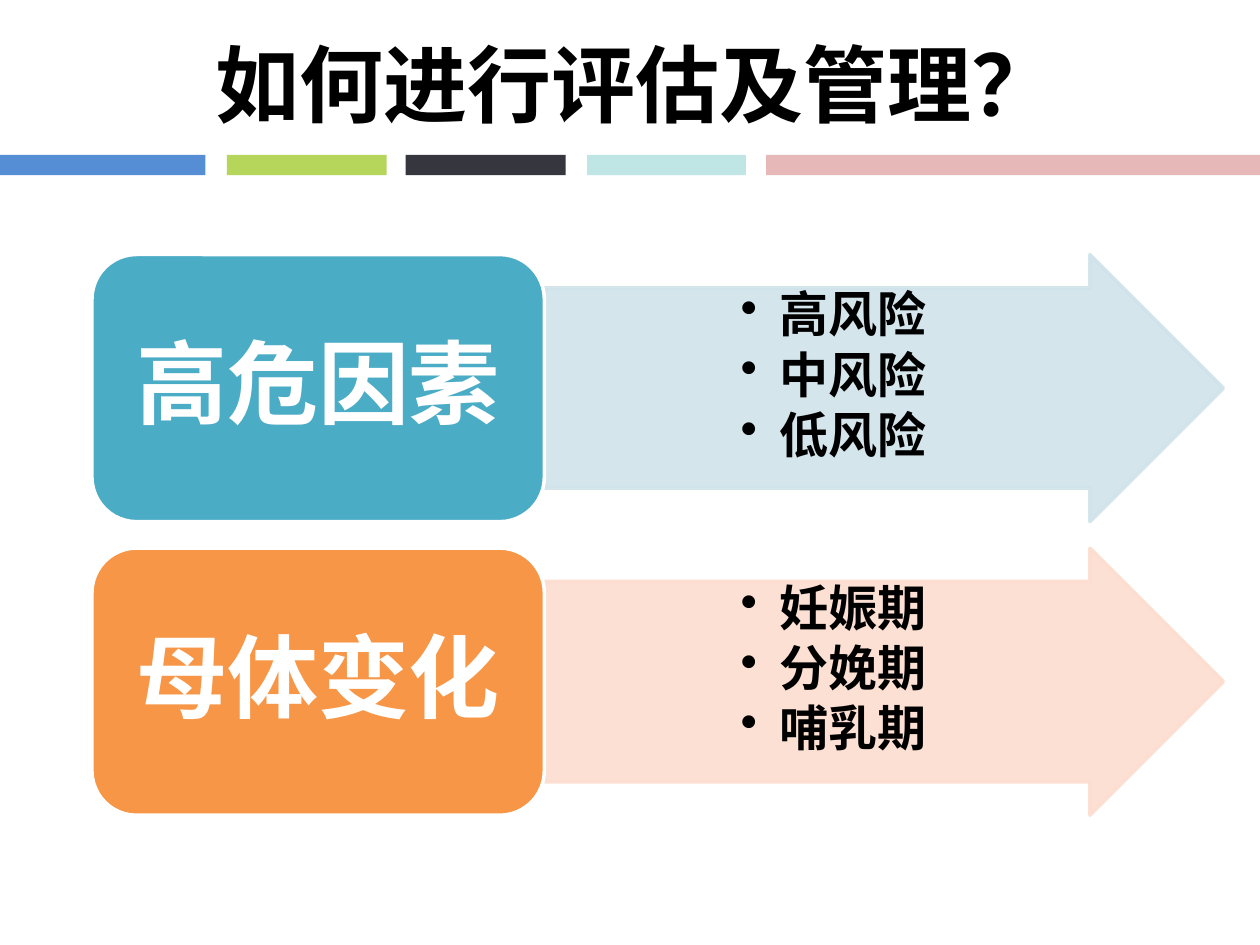
"""Build the assessment and management slide with two labelled arrows."""
import dataclasses
import typing

import lxml.etree
import pptx
import pptx.dml.color
import pptx.enum.shapes
import pptx.enum.text
import pptx.oxml.ns
import pptx.util

SHAPES = pptx.enum.shapes.MSO_SHAPE
ALIGN = pptx.enum.text.PP_ALIGN
ANCHOR = pptx.enum.text.MSO_ANCHOR
Inches = pptx.util.Inches
Pt = pptx.util.Pt


@dataclasses.dataclass(frozen=True)
class Theme:
    """Colours, fonts and type sizes of the slide."""

    ink: str = "000000"
    paper: str = "FFFFFF"
    font: str = "Calibri"
    chinese_font: str = "Noto Sans CJK SC"
    title_size: int = 48
    label_size: int = 52
    item_size: int = 28
    outline: int = 2
    arrow_opacity: int = 90


@dataclasses.dataclass(frozen=True)
class Box:
    """A rectangle in inches."""

    left: float
    top: float
    width: float
    height: float

    def inset(self, across: float, down: float) -> "Box":
        """Return the box shrunk on every side."""
        return Box(self.left + across, self.top + down,
                   self.width - 2 * across, self.height - 2 * down)

    def lengths(self) -> list[int]:
        """Return the four lengths for python-pptx."""
        return [Inches(value) for value in dataclasses.astuple(self)]


class Stripe(typing.NamedTuple):
    """One coloured piece of the band under the title."""

    left: float
    width: float
    colour: str


class Topic(typing.NamedTuple):
    """A label with the items inside its arrow."""

    label: str
    items: tuple[str, ...]
    label_colour: str
    arrow_colour: str


THEME = Theme()
STRIPES = (
    Stripe(0, 1.63, "558ED5"),
    Stripe(1.8, 1.27, "B5D55B"),
    Stripe(3.22, 1.27, "36363E"),
    Stripe(4.66, 1.26, "BFE5E5"),
    Stripe(6.08, 3.92, "E6B9B8"),
)
TOPICS = (
    Topic("高危因素", ("高风险", "中风险", "低风险"), "4BACC6", "D0E3EA"),
    Topic("母体变化", ("妊娠期", "分娩期", "哺乳期"), "F79646", "FCDDCF"),
)
FIRST_ROW, ROW_STEP, ROW_HEIGHT = 2.02, 2.33, 2.12
LABEL_LEFT, LABEL_WIDTH, ARROW_WIDTH = 0.73, 3.59, 5.39


def apply(target: typing.Any, formats: dict[str, typing.Any]) -> None:
    """Set every attribute named in the formats."""
    for name, value in formats.items():
        setattr(target, name, value)


def add_filled(slide, kind, box: Box, colour: str, outline: str | None = None):
    """Add a preset shape with a plain fill and an optional outline."""
    shape = slide.shapes.add_shape(kind, *box.lengths())
    shape.shadow.inherit = False
    shape.fill.solid()
    shape.fill.fore_color.rgb = pptx.dml.color.RGBColor.from_string(colour)
    if outline is None:
        shape.line.fill.background()
    else:
        shape.line.color.rgb = pptx.dml.color.RGBColor.from_string(outline)
        shape.line.width = Pt(THEME.outline)
    return shape


def add_text(slide, box: Box, lines: tuple[str, ...], size: int, colour: str,
             font: str, margins: tuple[float, float], anchor,
             formats: dict[str, typing.Any], indent: float = 0) -> None:
    """Add bold paragraphs, bulleted when an indent is given."""
    frame = slide.shapes.add_textbox(*box.lengths()).text_frame
    across, down = (Inches(margin) for margin in margins)
    apply(frame, {"word_wrap": True, "vertical_anchor": anchor,
                  "margin_left": across, "margin_right": across,
                  "margin_top": down, "margin_bottom": down})
    for index, line in enumerate(lines):
        paragraph = frame.paragraphs[0] if index == 0 else frame.add_paragraph()
        apply(paragraph, formats)
        if indent:
            properties = paragraph._p.get_or_add_pPr()
            properties.set("marL", str(Inches(indent)))
            properties.set("indent", str(-Inches(indent)))
            bullet = lxml.etree.SubElement(properties, pptx.oxml.ns.qn("a:buChar"))
            bullet.set("char", "•")
        run = paragraph.add_run()
        run.text = line
        apply(run.font, {"name": font, "size": Pt(size), "bold": True})
        run.font.color.rgb = pptx.dml.color.RGBColor.from_string(colour)
        east_asian = lxml.etree.SubElement(
            run._r.get_or_add_rPr(), pptx.oxml.ns.qn("a:ea"))
        east_asian.set("typeface", THEME.chinese_font)


def add_topic(slide, topic: Topic, row: int) -> None:
    """Draw one row: the arrow with its items and the label block."""
    top = FIRST_ROW + row * ROW_STEP
    label = Box(LABEL_LEFT, top, LABEL_WIDTH, ROW_HEIGHT)
    arrow_left = LABEL_LEFT + LABEL_WIDTH
    arrow = add_filled(slide, SHAPES.RIGHT_ARROW,
                       Box(arrow_left, top, ARROW_WIDTH, ROW_HEIGHT),
                       topic.arrow_colour, topic.arrow_colour)
    arrow.adjustments[0] = 0.75
    for colour in arrow._element.spPr.iter(pptx.oxml.ns.qn("a:srgbClr")):
        alpha = lxml.etree.SubElement(colour, pptx.oxml.ns.qn("a:alpha"))
        alpha.set("val", str(THEME.arrow_opacity * 1000))
    add_text(slide, Box(arrow_left, top + ROW_HEIGHT / 8, 4.59, ROW_HEIGHT * 0.75),
             topic.items, THEME.item_size, THEME.ink, THEME.font, (0.02, 0.02),
             ANCHOR.TOP, {"alignment": ALIGN.CENTER, "level": 1,
                          "line_spacing": 0.9,
                          "space_after": Pt(THEME.item_size * 0.15)}, 0.31)
    add_filled(slide, SHAPES.ROUNDED_RECTANGLE, label, topic.label_colour, THEME.paper)
    add_text(slide, label.inset(0.1, 0.1), (topic.label,), THEME.label_size,
             THEME.paper, THEME.font, (0.22, 0.11), ANCHOR.MIDDLE,
             {"alignment": ALIGN.CENTER, "line_spacing": 0.9,
              "space_after": Pt(THEME.label_size * 0.35)})


def main() -> None:
    """Build and save the presentation."""
    presentation = pptx.Presentation()
    apply(presentation, {"slide_width": Inches(10), "slide_height": Inches(7.5)})
    slide = presentation.slides.add_slide(presentation.slide_layouts[6])
    for stripe in STRIPES:
        add_filled(slide, SHAPES.RECTANGLE,
                   Box(stripe.left, 1.23, stripe.width, 0.16), stripe.colour)
    add_text(slide, Box(1.61, 0.21, 8.11, 0.91), ("如何进行评估及管理？",),
             THEME.title_size, THEME.ink, THEME.chinese_font, (0.1, 0.05),
             ANCHOR.TOP, {"alignment": ALIGN.LEFT})
    for row, topic in enumerate(TOPICS):
        add_topic(slide, topic, row)
    presentation.save("out.pptx")


if __name__ == "__main__":
    main()
